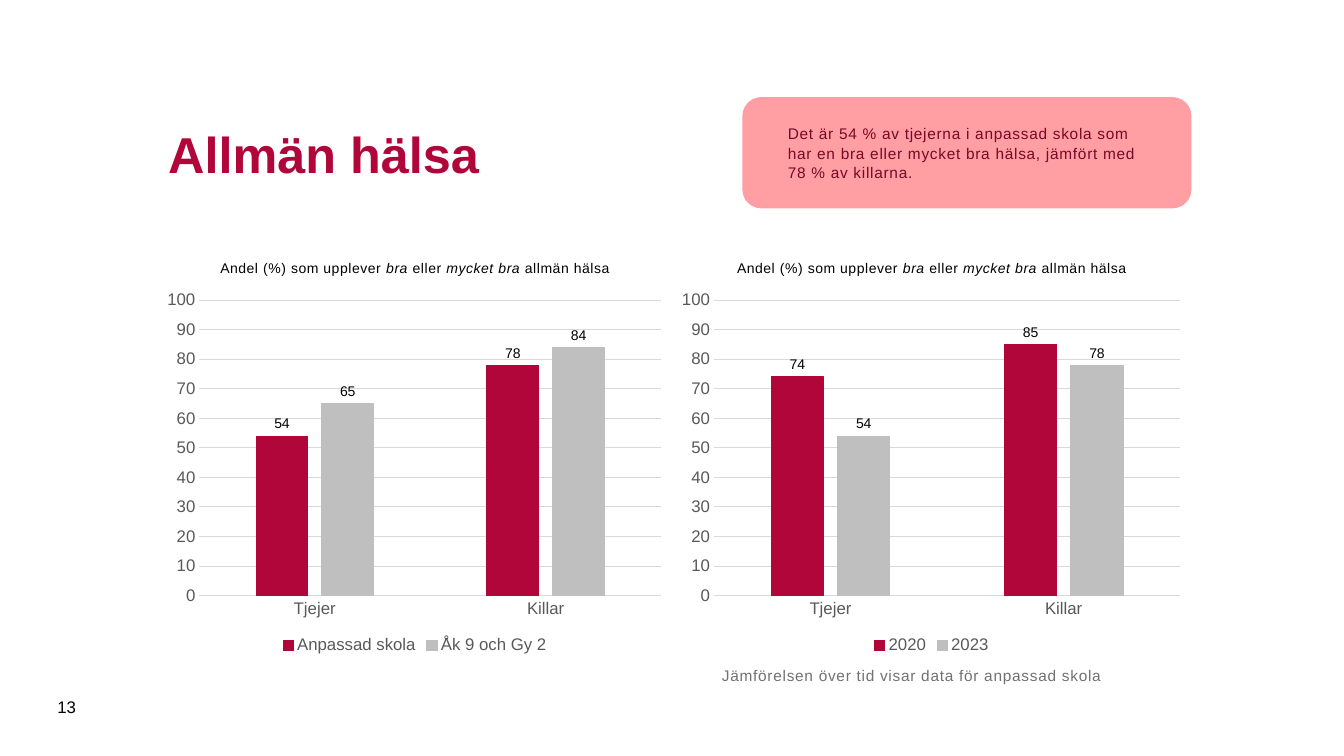
from dataclasses import dataclass

from lxml import etree
from pptx import Presentation
from pptx.chart.data import CategoryChartData
from pptx.dml.color import RGBColor
from pptx.enum.chart import XL_CHART_TYPE, XL_LABEL_POSITION, XL_LEGEND_POSITION, XL_TICK_MARK
from pptx.enum.shapes import MSO_SHAPE
from pptx.enum.text import MSO_ANCHOR, PP_ALIGN
from pptx.oxml import parse_xml
from pptx.oxml.ns import nsdecls, qn
from pptx.util import Pt

PX = 9144  # 100 px to the inch
FONT = "Arial"
COLORS = {
    "crimson": "B1063A", "silver": "BFBFBF", "grid": "D9D9D9", "axis": "595959",
    "black": "000000", "pink": "FF9DA2", "wine": "790726", "note": "717171",
}
NUMBER_FORMAT = "#,##0;#,##0"
CATEGORIES = ("Tjejer", "Killar")
SERIES_COLORS = ("crimson", "silver")
CHART_TITLE = (("Andel (%) som upplever ", False), ("bra", True), (" eller ", False),
               ("mycket bra", True), (" allmän hälsa", False))
PLOT_AREA = {"x": 0.08, "y": 0.14, "w": 0.9, "h": 0.71}


@dataclass
class Box:
    left: int
    top: int
    width: int
    height: int

    def emu(self) -> tuple:
        return tuple(n * PX for n in (self.left, self.top, self.width, self.height))


@dataclass
class Label:
    text: str
    box: Box
    size: int
    color: str
    bold: bool = False
    tracked: bool = False
    anchor: MSO_ANCHOR = MSO_ANCHOR.MIDDLE
    insets: tuple = (10, 5)


@dataclass
class Comparison:
    box: Box
    series: dict


LABELS = (
    Label("Allmän hälsa", Box(157, 81, 1024, 142), 36, "crimson", bold=True),
    Label("13", Box(47, 681, 57, 40), 12, "black"),
    Label("Jämförelsen över tid visar data för anpassad skola", Box(716, 661, 531, 89), 11,
          "note", tracked=True, anchor=MSO_ANCHOR.TOP, insets=(0, 0)),
)
CALLOUT = Label("Det är 54 % av tjejerna i anpassad skola som har en bra eller mycket bra hälsa, "
                "jämfört med 78 % av killarna.", Box(737, 97, 444, 109), 11, "wine",
                tracked=True, insets=(39, 20))
COMPARISONS = (
    Comparison(Box(157, 240, 509, 413), {"Anpassad skola": (54, 78), "Åk 9 och Gy 2": (65, 84)}),
    Comparison(Box(667, 240, 514, 413), {"2020": (74, 85), "2023": (54, 78)}),
)


def rgb(name: str) -> RGBColor:
    return RGBColor.from_string(COLORS[name])


def set_font(font, size: int, color: str, bold: bool = False) -> None:
    font.name, font.size, font.bold = FONT, Pt(size), bold
    font.color.rgb = rgb(color)


def set_line(line, color: str, width: float = 0.75) -> None:
    line.color.rgb = rgb(color)
    line.width = Pt(width)


def track(paragraph) -> None:
    """Widen the letter spacing by half a point."""
    for run in paragraph.runs:
        run._r.get_or_add_rPr().set("spc", "50")


def write(shape, label: Label) -> None:
    frame = shape.text_frame
    frame.word_wrap = True
    frame.vertical_anchor = label.anchor
    frame.margin_left = frame.margin_right = label.insets[0] * PX
    frame.margin_top = frame.margin_bottom = label.insets[1] * PX
    paragraph = frame.paragraphs[0]
    paragraph.text = label.text
    paragraph.alignment = PP_ALIGN.LEFT
    set_font(paragraph.font, label.size, label.color, label.bold)
    if label.tracked:
        track(paragraph)


def add_callout(slide, label: Label) -> None:
    panel = slide.shapes.add_shape(MSO_SHAPE.ROUNDED_RECTANGLE, *label.box.emu())
    panel.shadow.inherit = False
    panel.fill.solid()
    panel.fill.fore_color.rgb = rgb("pink")
    fill_color = panel._element.spPr.find(qn("a:solidFill"))[0]
    etree.SubElement(fill_color, qn("a:alpha"), val="98000")
    set_line(panel.line, "pink", 1)
    write(panel, label)
    panel.text_frame.paragraphs[0].line_spacing = 1.05


def add_chart_title(chart) -> None:
    paragraph = chart.chart_title.text_frame.paragraphs[0]
    for text, italic in CHART_TITLE:
        run = paragraph.add_run()
        run.text = text
        run.font.italic = italic
    set_font(paragraph.font, 10, "black")
    track(paragraph)


def fix_plot_area(chart) -> None:
    """Place the inner plot area by fractions of the chart."""
    plot_area = chart._chartSpace.chart.plotArea
    for old in plot_area.findall(qn("c:layout")):
        plot_area.remove(old)
    sizes = "".join(f'<c:{side} val="{share}"/>' for side, share in PLOT_AREA.items())
    plot_area.insert(0, parse_xml(
        f'<c:layout {nsdecls("c")}><c:manualLayout><c:layoutTarget val="inner"/>'
        f'<c:xMode val="edge"/><c:yMode val="edge"/>{sizes}</c:manualLayout></c:layout>'))


def add_comparison(slide, comparison: Comparison) -> None:
    data = CategoryChartData(number_format=NUMBER_FORMAT)
    data.categories = CATEGORIES
    for name, values in comparison.series.items():
        data.add_series(name, values)
    chart = slide.shapes.add_chart(
        XL_CHART_TYPE.COLUMN_CLUSTERED, *comparison.box.emu(), data).chart
    set_font(chart.font, 10, "black")
    add_chart_title(chart)
    fix_plot_area(chart)

    chart.has_legend = True
    chart.legend.position = XL_LEGEND_POSITION.BOTTOM
    chart.legend.include_in_layout = False
    set_font(chart.legend.font, 12, "axis")

    for axis in (chart.category_axis, chart.value_axis):
        axis.major_tick_mark = axis.minor_tick_mark = XL_TICK_MARK.NONE
        set_font(axis.tick_labels.font, 12, "axis")
    set_line(chart.category_axis.format.line, "grid")
    percent = chart.value_axis
    percent.minimum_scale, percent.maximum_scale, percent.major_unit = 0, 100, 10
    percent.tick_labels.number_format = NUMBER_FORMAT
    percent.tick_labels.number_format_is_linked = False
    percent.format.line.fill.background()
    set_line(percent.major_gridlines.format.line, "grid")

    plot = chart.plots[0]
    plot.vary_by_categories = False
    plot.gap_width, plot.overlap = 219, -27
    for series, color in zip(plot.series, SERIES_COLORS):
        series.format.fill.solid()
        series.format.fill.fore_color.rgb = rgb(color)
        set_line(series.format.line, color)
        labels = series.data_labels
        labels.show_value = True
        labels.position = XL_LABEL_POSITION.OUTSIDE_END
        labels.number_format = NUMBER_FORMAT
        labels.number_format_is_linked = False
        set_font(labels.font, 10, "black")


def main() -> None:
    deck = Presentation()
    deck.slide_width, deck.slide_height = 1333 * PX, 750 * PX
    slide = deck.slides.add_slide(deck.slide_layouts[6])
    for label in LABELS:
        write(slide.shapes.add_textbox(*label.box.emu()), label)
    for comparison in COMPARISONS:
        add_comparison(slide, comparison)
    add_callout(slide, CALLOUT)
    deck.save("out.pptx")


if __name__ == "__main__":
    main()
